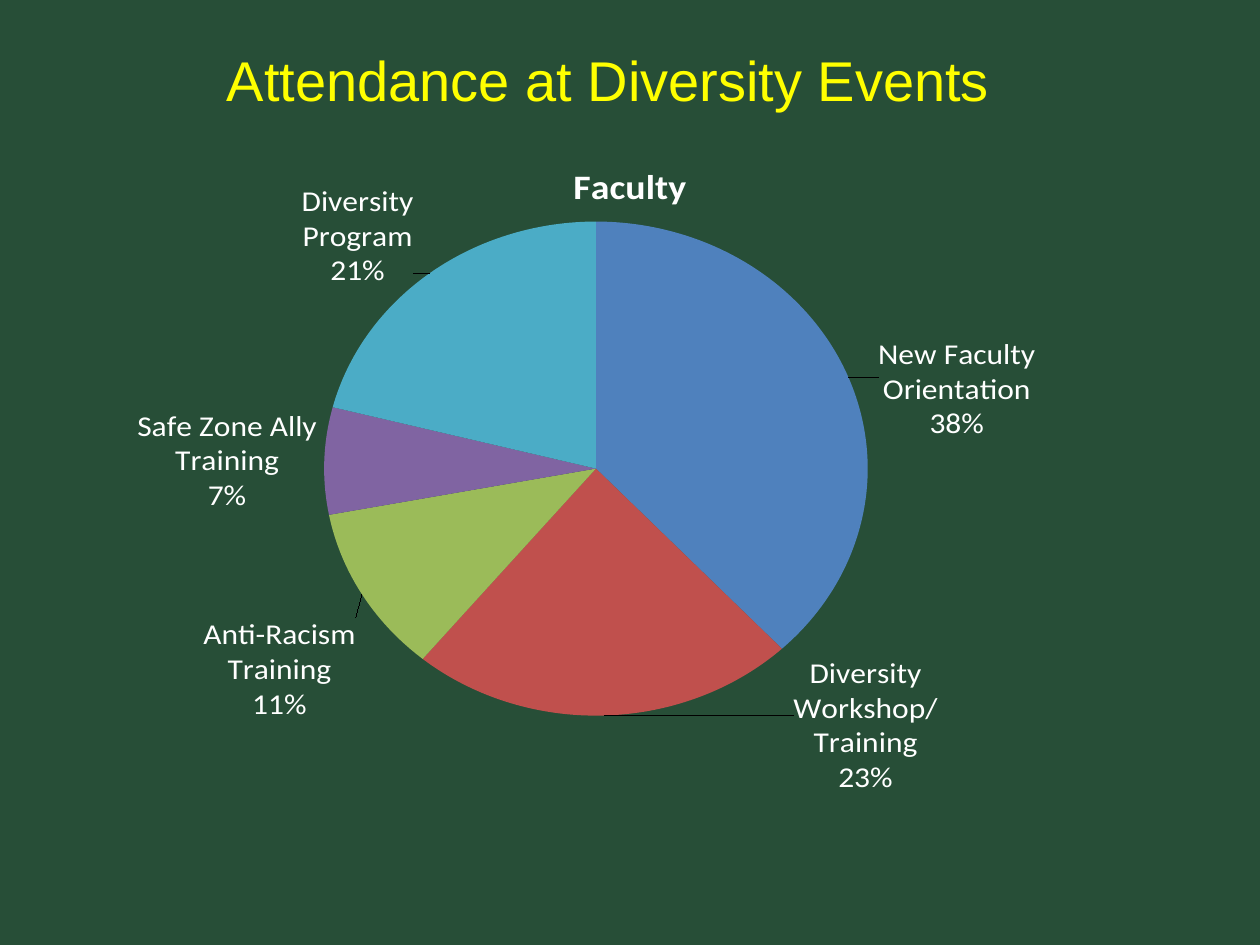
from dataclasses import dataclass

from lxml import etree
from pptx import Presentation, util as u
from pptx.chart.data import CategoryChartData
from pptx.dml.color import RGBColor
from pptx.enum import chart as charts, text
from pptx.oxml.ns import qn


@dataclass(frozen=True)
class Theme:
    background: str = "274E37"
    title: str = "FFFF00"
    label: str = "FFFFFF"
    slices: tuple = ("4F81BD", "C0504D", "9BBB59", "8064A2", "4BACC6")
    title_font: str = "Arial"
    chart_font: str = "Calibri"
    title_size: float = 32
    heading_size: float = 21.6
    label_size: float = 18


def style_font(font, *, name, size, color, bold=False):
    font.name, font.size, font.bold = name, u.Pt(size), bold
    font.color.rgb = RGBColor.from_string(color)


def write(frame, lines, **style):
    """Fill a text frame with one paragraph per line, all in one format."""
    frame.text = lines
    for para in frame.paragraphs:
        for span in para.runs:
            style_font(span.font, **style)


def manual_layout(x, y, width=None, height=None):
    """Chart layout in shares of the chart; with a size it is an inner plot."""
    layout = etree.Element(qn("c:layout"))
    manual = etree.SubElement(layout, qn("c:manualLayout"))
    values = {"x": x, "y": y}
    if width is not None:
        values = {"layoutTarget": "inner", "xMode": "edge", "yMode": "edge",
                  **values, "w": width, "h": height}
    for tag, value in values.items():
        etree.SubElement(manual, qn(f"c:{tag}")).set("val", str(value))
    return layout


class SlideBuilder:
    def __init__(self, deck, theme):
        self.deck, self.theme = deck, theme
        self.slide = deck.slides.add_slide(deck.slide_layouts[5])
        fill = self.slide.background.fill
        fill.solid()
        fill.fore_color.rgb = RGBColor.from_string(theme.background)

    def area(self, left, top, width, height):
        """Turn shares of the slide into lengths."""
        wide, high = self.deck.slide_width, self.deck.slide_height
        return (int(left * wide), int(top * high),
                int(width * wide), int(height * high))

    def title(self, words, area):
        box = self.slide.shapes.title
        box.left, box.top, box.width, box.height = self.area(*area)
        frame = box.text_frame
        frame.vertical_anchor = text.MSO_ANCHOR.MIDDLE
        write(frame, words, name=self.theme.title_font,
              size=self.theme.title_size, color=self.theme.title)
        frame.paragraphs[0].alignment = text.PP_ALIGN.CENTER

    def pie(self, heading, shares, area, plot, offsets, custom):
        theme = self.theme
        data = CategoryChartData()
        data.categories = list(shares)
        data.add_series(heading, list(shares.values()))
        chart = self.slide.shapes.add_chart(
            charts.XL_CHART_TYPE.PIE, *self.area(*area), data).chart
        chart.has_legend = False
        label_style = dict(name=theme.chart_font, size=theme.label_size,
                           color=theme.label)
        style_font(chart.font, **label_style)
        write(chart.chart_title.text_frame, heading, name=theme.chart_font,
              size=theme.heading_size, color=theme.label, bold=True)

        # Plot area
        plot_area = chart.plots[0]._element.getparent()
        for old in plot_area.findall(qn("c:layout")):
            plot_area.remove(old)
        plot_area.insert(0, manual_layout(*plot))

        # Labels shared by every slice
        pie = chart.plots[0]
        pie.vary_by_categories = True
        series = pie.series[0]
        labels = series.data_labels
        labels.show_value = False
        labels.show_category_name = labels.show_percentage = True
        labels.show_leader_lines = True
        labels.position = charts.XL_LABEL_POSITION.OUTSIDE_END
        style_font(labels.font, **label_style)
        leader = labels._element.find(qn("c:showLeaderLines"))
        if leader is not None:
            leader.set("val", "1")

        # Slice colours and moved labels
        for index, color in enumerate(theme.slices):
            point = series.points[index]
            point.format.fill.solid()
            point.format.fill.fore_color.rgb = RGBColor.from_string(color)
            if index in offsets:
                self.move_label(point.data_label, offsets[index],
                                custom.get(index), label_style)

    def move_label(self, label, offset, words, style):
        label.position = charts.XL_LABEL_POSITION.OUTSIDE_END
        if words:
            write(label.text_frame, words, **style)
        else:
            style_font(label.font, **style)
        element = label._dLbl
        element.insert(1, manual_layout(*offset))
        for tag, shown in (("showVal", "0"), ("showCatName", "1"),
                           ("showPercent", "1")):
            element.find(qn(f"c:{tag}")).set("val", shown)


def main():
    deck = Presentation()
    deck.slide_width, deck.slide_height = u.Inches(10), u.Inches(7.5)
    page = SlideBuilder(deck, Theme())
    page.title("Attendance at Diversity Events", (0.058, 0, 0.85, 1 / 6))
    page.pie(
        "Faculty",
        {"New Faculty Orientation": 38, "Diversity Workshop/Training": 23,
         "Anti-Racism Training": 11, "Safe Zone Ally Training": 7,
         "Diversity Program": 21},
        area=(0.05, 0.144, 0.9, 0.767),
        plot=(0.23, 0.13, 0.48, 0.75),
        offsets={0: (0.02, 0.1), 1: (0.23, -0.08),
                 2: (0, 0.03), 4: (-0.01, 0.03)},
        custom={1: "Diversity Workshop/\nTraining\n23%"})
    deck.save("out.pptx")


if __name__ == "__main__":
    main()
